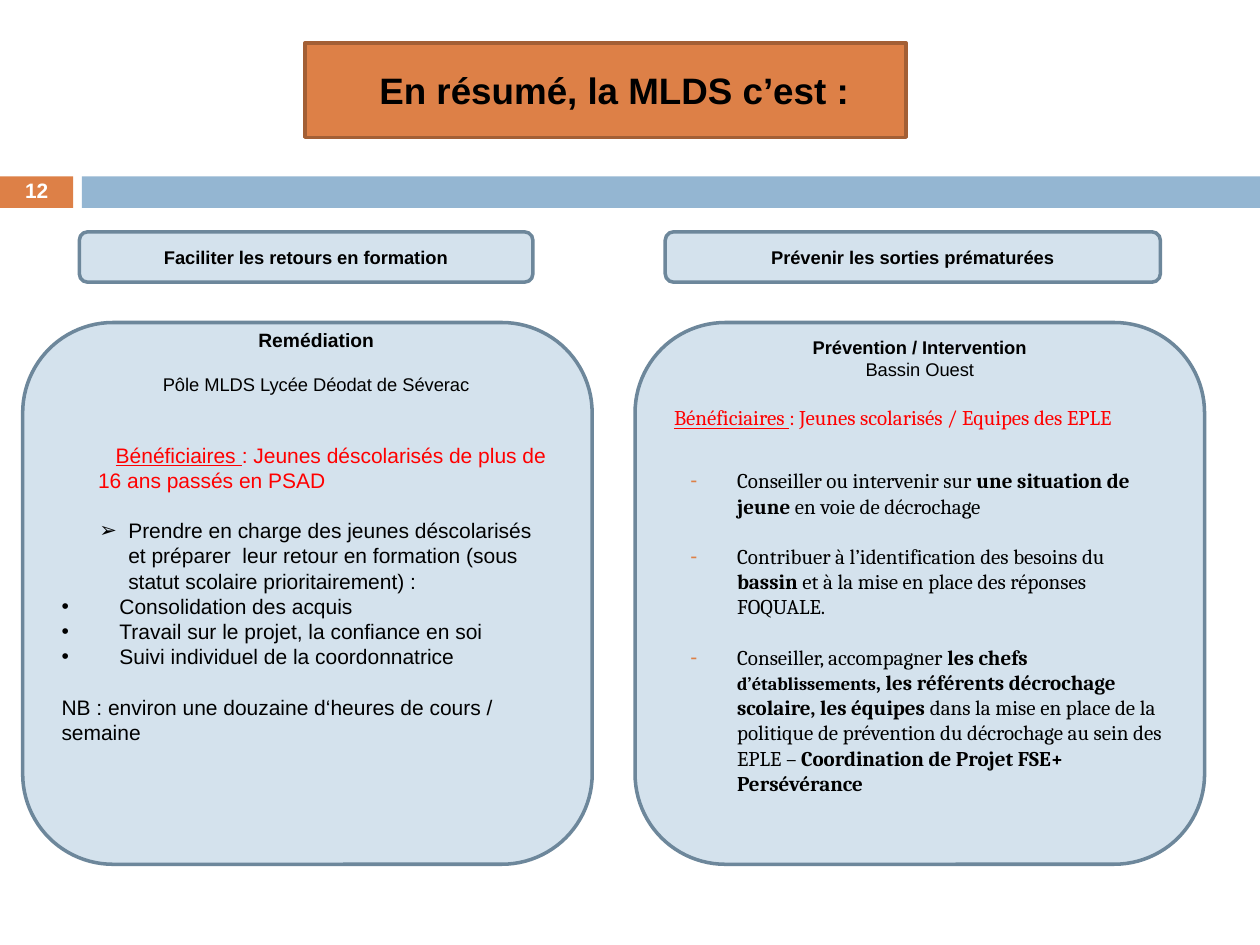
import pptx
import pptx.dml.color
import pptx.enum.shapes
import pptx.enum.text
import pptx.oxml.ns
import pptx.util
from lxml import etree

Inches = pptx.util.Inches
Pt = pptx.util.Pt
RGBColor = pptx.dml.color.RGBColor
Shape = pptx.enum.shapes.MSO_SHAPE
Align = pptx.enum.text.PP_ALIGN
Anchor = pptx.enum.text.MSO_ANCHOR
qn = pptx.oxml.ns.qn

ORANGE = RGBColor(0xDD, 0x80, 0x47)
RUST = RGBColor(0xA3, 0x5F, 0x35)
BLUE = RGBColor(0x94, 0xB6, 0xD2)
PALE = RGBColor(0xD4, 0xE2, 0xED)
SLATE = RGBColor(0x6D, 0x87, 0x9B)
RED = RGBColor(0xFF, 0, 0)
BLACK = RGBColor(0, 0, 0)
WHITE = RGBColor(0xFF, 0xFF, 0xFF)
LINE = 14.4  # pitch of the body text, in points


class Deck:
    """Holds the style and the current slide."""

    def __init__(self, font="Arial"):
        self.font = font
        self.prs = pptx.Presentation()
        self.prs.slide_width = Inches(10)
        self.prs.slide_height = Inches(7.5)
        self.slide = self.prs.slides.add_slide(self.prs.slide_layouts[1])

    def paint(self, shape, fill, line=None):
        shape.fill.solid()
        shape.fill.fore_color.rgb = fill
        if line is None:
            shape.line.fill.background()
        else:
            shape.line.color.rgb = line
            shape.line.width = Pt(2)

    def box(self, kind, at, fill, line=None):
        shape = self.slide.shapes.add_shape(kind, *map(Inches, at))
        shape.shadow.inherit = False
        self.paint(shape, fill, line)
        self.frame(shape)
        return shape

    def holder(self, index, at, fill, line):
        """Turn a placeholder into a rounded panel."""
        shape = self.slide.placeholders[index]
        shape.left, shape.top, shape.width, shape.height = map(Inches, at)
        geom = etree.SubElement(shape._element.spPr, qn("a:prstGeom"),
                                prst="roundRect")
        etree.SubElement(geom, qn("a:avLst"))
        self.paint(shape, fill, line)
        self.frame(shape)
        return shape

    def label(self, at, anchor=Anchor.TOP):
        shape = self.slide.shapes.add_textbox(*map(Inches, at))
        self.frame(shape, anchor)
        return shape

    def frame(self, shape, anchor=Anchor.MIDDLE):
        text = shape.text_frame
        text.word_wrap = True
        text.auto_size = pptx.enum.text.MSO_AUTO_SIZE.NONE
        text.vertical_anchor = anchor

    def para(self, shape, runs, size=12, color=BLACK, bold=None, font=None,
             align=Align.LEFT, indent=(0, 0), mark=None, tint=BLACK,
             before=0, pitch=None):
        """Add a paragraph; runs are pairs of words and font settings."""
        text = shape.text_frame
        p = text.paragraphs[0]
        if p.runs:
            p = text.add_paragraph()
        self.bullet(p, indent, mark, tint)
        p.alignment = align
        p.space_before = Pt(before)
        if pitch:
            p.line_spacing = pitch
        p.font.name = font or self.font
        p.font.size = Pt(size)
        p.font.color.rgb = color
        p.font.bold = bold
        for words, style in [(runs, {})] if isinstance(runs, str) else runs:
            run = p.add_run()
            run.text = words
            for key, value in style.items():
                setattr(run.font, key, value)

    def bullet(self, p, indent, mark, tint):
        props = p._p.get_or_add_pPr()
        left, first = indent
        props.set("marL", str(Inches(left)))
        props.set("indent", str(Inches(first)))
        if mark is None:
            etree.SubElement(props, qn("a:buNone"))
            return
        color = etree.SubElement(props, qn("a:buClr"))
        etree.SubElement(color, qn("a:srgbClr"), val=str(tint))
        etree.SubElement(props, qn("a:buFont"), typeface=self.font)
        etree.SubElement(props, qn("a:buChar"), char=mark)


def left_panel(deck):
    panel = deck.box(Shape.ROUNDED_RECTANGLE, (0.18, 2.56, 4.52, 4.3),
                     PALE, SLATE)
    body = dict(pitch=Pt(LINE))
    deck.para(panel, [
        ("Bénéficiaires ", {"underline": True}),
        (": Jeunes déscolarisés de plus de 16 ans passés en PSAD", {}),
    ], color=RED, indent=(0.29, 0.14), **body)
    deck.para(panel, "Prendre en charge des jeunes déscolarisés et préparer  "
              "leur retour en formation (sous statut scolaire "
              "prioritairement) :", indent=(0.53, -0.23), mark="➢",
              before=LINE, **body)
    for item in ("Consolidation des acquis",
                 "Travail sur le projet, la confiance en soi",
                 "Suivi individuel de la coordonnatrice"):
        deck.para(panel, item, indent=(0.46, -0.46), mark="•", **body)
    deck.para(panel, "NB : environ une douzaine d‘heures de cours / semaine",
              before=LINE, **body)

    head = deck.label((0.8, 2.56, 3.42, 0.64))
    deck.para(head, "Remédiation", 11, bold=True, align=Align.CENTER)
    deck.para(head, "Pôle MLDS Lycée Déodat de Séverac", 10.5,
              align=Align.CENTER, before=12)


def right_panel(deck):
    panel = deck.holder(1, (5.04, 2.56, 4.52, 4.3), PALE, SLATE)
    panel.text_frame.margin_top = Inches(0.16)
    body = dict(font="Cambria", pitch=Pt(LINE))
    bold = {"bold": True}
    deck.para(panel, [
        ("Bénéficiaires ", {"underline": True}),
        (": Jeunes scolarisés / Equipes des EPLE", {}),
    ], color=RED, **body)
    items = [
        [("Conseiller ou intervenir sur ", {}),
         ("une situation de jeune ", bold),
         ("en voie de décrochage", {})],
        [("Contribuer à l’identification des besoins du ", {}),
         ("bassin", bold),
         (" et à la mise en place des réponses FOQUALE.", {})],
        [("Conseiller, accompagner ", {}),
         ("les chefs ", bold),
         ("d’établissements", {"bold": True, "size": Pt(10.5)}),
         (", les référents décrochage scolaire, les équipes", bold),
         (" dans la mise en place de la politique de prévention du "
          "décrochage au sein des EPLE – ", {}),
         ("Coordination de Projet FSE+ Persévérance", bold)],
    ]
    for i, runs in enumerate(items):
        deck.para(panel, runs, indent=(0.5, -0.37), mark="-", tint=ORANGE,
                  before=LINE if i else 1.5 * LINE, **body)

    head = deck.label((5.04, 2.62, 4.52, 0.5))
    deck.para(head, "Prévention / Intervention", 10.5, bold=True,
              align=Align.CENTER)
    deck.para(head, "Bassin Ouest", 10.5, align=Align.CENTER)


def main():
    deck = Deck()
    deck.box(Shape.RECTANGLE, (0, 1.4, 0.58, 0.25), ORANGE)
    deck.box(Shape.RECTANGLE, (0.65, 1.4, 9.35, 0.25), BLUE)
    page = deck.label((0, 1.39, 0.58, 0.27), Anchor.MIDDLE)
    deck.para(page, "12", 11.9, WHITE, True, align=Align.CENTER, pitch=0.8)

    title = deck.holder(0, (2.42, 0.34, 4.77, 0.75), ORANGE, RUST)
    title.text_frame.margin_left = Inches(0.24)
    deck.para(title, "En résumé, la MLDS c’est :", 21, bold=True,
              align=Align.CENTER)

    for left, width, words in (
            (0.63, 3.6, "Faciliter les retours en formation"),
            (5.28, 3.93, "Prévenir les sorties prématurées")):
        tab = deck.box(Shape.ROUNDED_RECTANGLE, (left, 1.84, width, 0.4),
                       PALE, SLATE)
        deck.para(tab, words, 10.5, bold=True, align=Align.CENTER)

    left_panel(deck)
    right_panel(deck)
    deck.prs.save("out.pptx")


if __name__ == "__main__":
    main()
